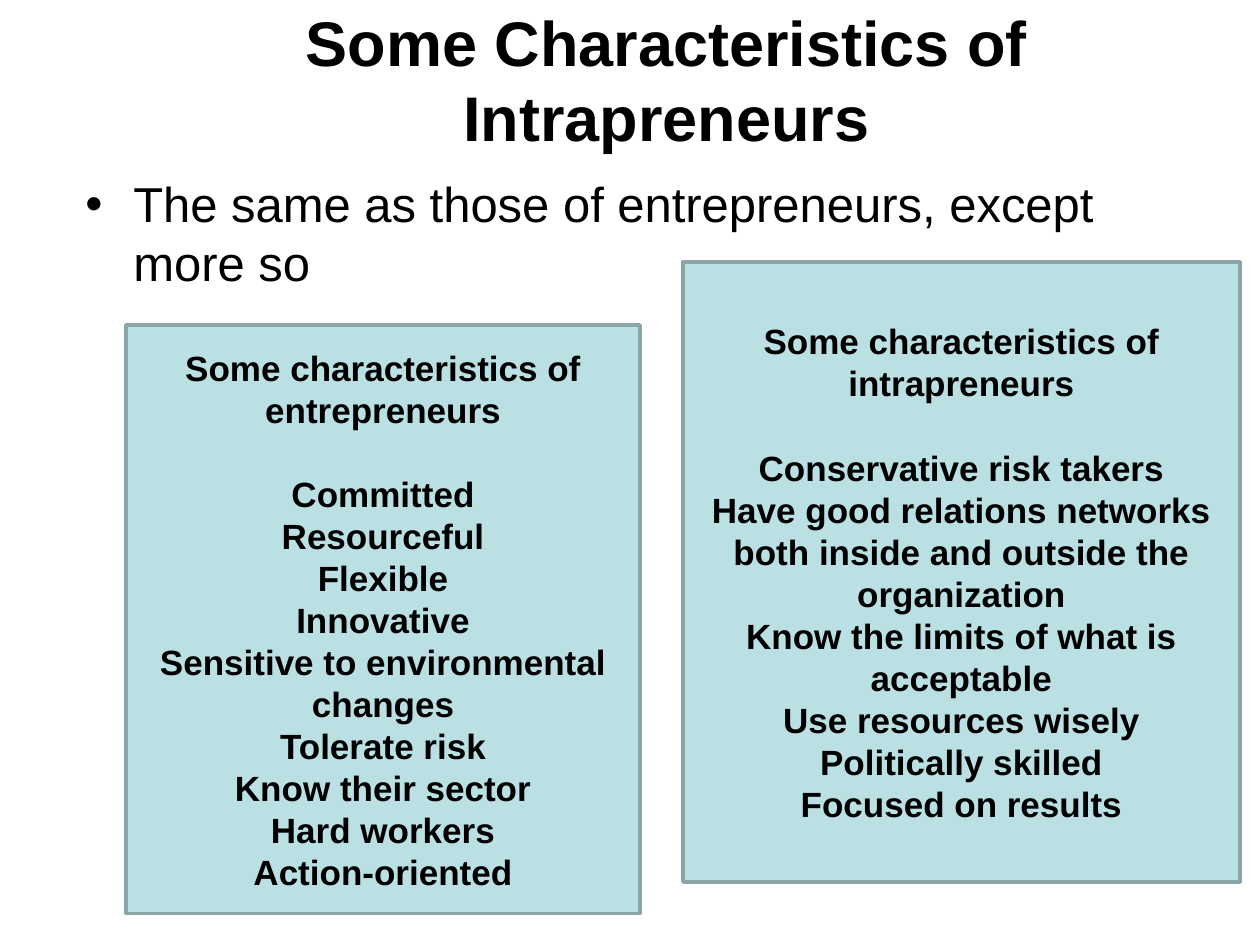
from lxml import etree
from pptx import Presentation
from pptx.dml.color import RGBColor
from pptx.enum import shapes, text
from pptx.oxml import ns
from pptx.util import Inches, Pt

BLACK = RGBColor(0x00, 0x00, 0x00)
PALE_TEAL = RGBColor(0xBB, 0xE0, 0xE3)
GREY_TEAL = RGBColor(0x8A, 0xA6, 0xA8)
FONT = "Arial"

ENTREPRENEURS = [
    "Some characteristics of entrepreneurs",
    "Committed",
    "Resourceful",
    "Flexible",
    "Innovative",
    "Sensitive to environmental changes",
    "Tolerate risk",
    "Know their sector",
    "Hard workers",
    "Action-oriented",
]
INTRAPRENEURS = [
    "Some characteristics of intrapreneurs",
    "Conservative risk takers",
    "Have good relations networks both inside and outside the organization",
    "Know the limits of what is acceptable",
    "Use resources wisely",
    "Politically skilled",
    "Focused on results",
]


def format_paragraph(paragraph, size, bold, alignment):
    paragraph.alignment = alignment
    for run in paragraph.runs:
        run.font.name = FONT
        run.font.size = Pt(size)
        run.font.bold = bold
        run.font.color.rgb = BLACK


def set_title(slide, wording):
    title = slide.shapes.title
    title.left, title.top = Inches(0.83), Inches(0)
    title.width, title.height = Inches(8.92), Inches(1.25)
    frame = title.text_frame
    frame.text = wording
    frame.vertical_anchor = text.MSO_ANCHOR.MIDDLE
    format_paragraph(frame.paragraphs[0], 36, True, text.PP_ALIGN.CENTER)


def add_bullet_text(slide, wording):
    box = slide.shapes.add_textbox(Inches(0.58), Inches(1.33), Inches(9.1), Inches(6.01))
    frame = box.text_frame
    frame.word_wrap = True
    frame.text = wording
    paragraph = frame.paragraphs[0]
    properties = paragraph._p.get_or_add_pPr()
    properties.set("marL", str(Inches(0.38)))
    properties.set("indent", str(-Inches(0.38)))
    etree.SubElement(properties, ns.qn("a:buFont"), typeface=FONT)
    etree.SubElement(properties, ns.qn("a:buChar"), char="•")
    format_paragraph(paragraph, 28, False, text.PP_ALIGN.LEFT)


def add_list_panel(slide, left, top, width, height, lines):
    """Add a filled panel whose first line is a heading set apart from the rest."""
    panel = slide.shapes.add_shape(
        shapes.MSO_SHAPE.RECTANGLE, Inches(left), Inches(top), Inches(width), Inches(height)
    )
    panel.shadow.inherit = False
    panel.fill.solid()
    panel.fill.fore_color.rgb = PALE_TEAL
    panel.line.color.rgb = GREY_TEAL
    panel.line.width = Pt(2)
    frame = panel.text_frame
    frame.word_wrap = True
    frame.vertical_anchor = text.MSO_ANCHOR.MIDDLE
    frame.text = "\n".join(lines)
    for paragraph in frame.paragraphs:
        format_paragraph(paragraph, 20, True, text.PP_ALIGN.CENTER)
    frame.paragraphs[0].space_after = Pt(24)


def main():
    presentation = Presentation()
    presentation.slide_width = Inches(10)
    presentation.slide_height = Inches(7.5)
    slide = presentation.slides.add_slide(presentation.slide_layouts[5])
    set_title(slide, "Some Characteristics of Intrapreneurs")
    add_bullet_text(slide, "The same as those of entrepreneurs, except more so")
    add_list_panel(slide, 1, 2.58, 4.08, 4.67, ENTREPRENEURS)
    add_list_panel(slide, 5.42, 2.08, 4.42, 4.92, INTRAPRENEURS)
    presentation.save("out.pptx")


if __name__ == "__main__":
    main()
